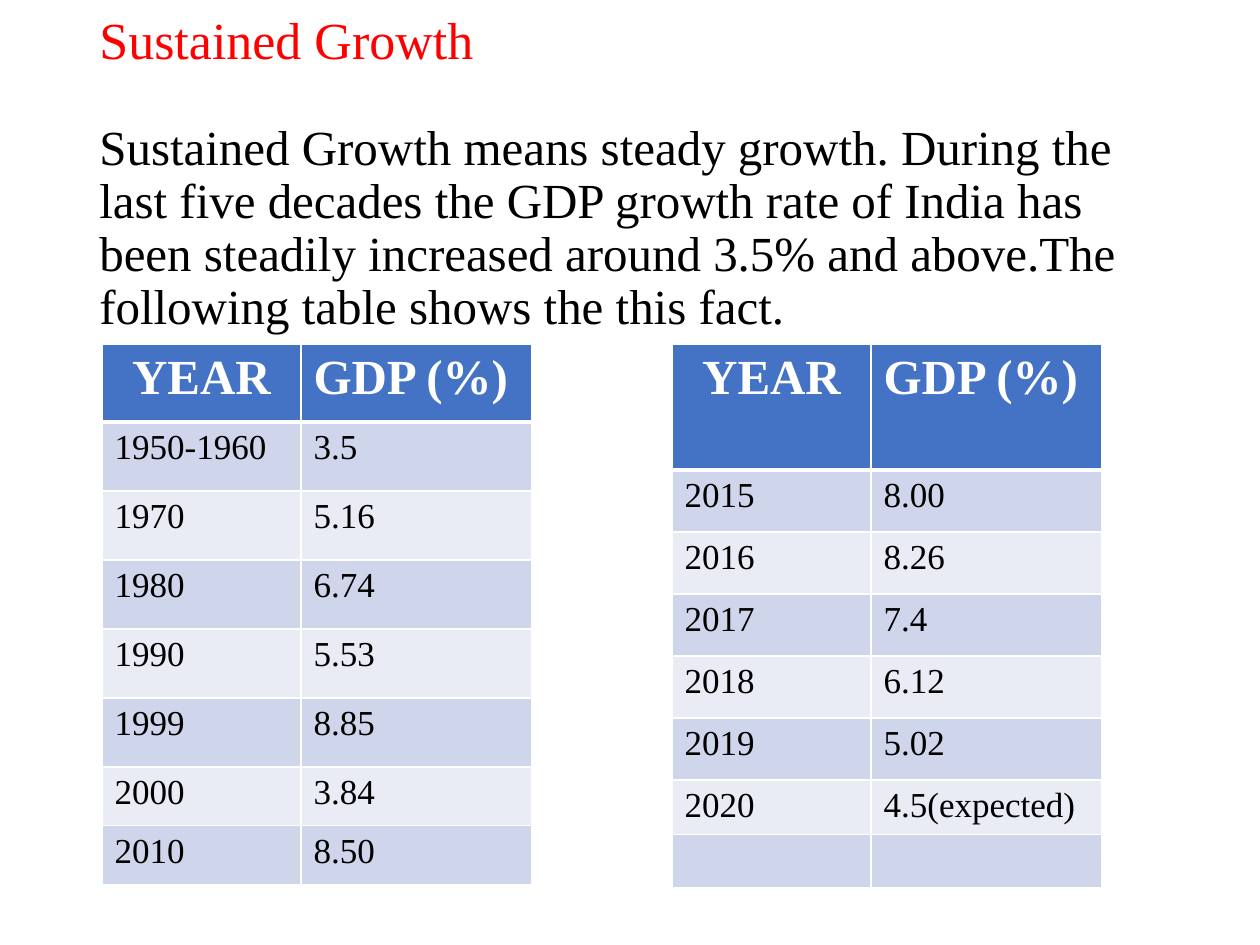
import pptx
import pptx.dml.color
import pptx.enum.text
import pptx.oxml
import pptx.oxml.ns
import pptx.util
from dataclasses import dataclass

EMU_PER_PX = 914400 / 126


def px(length):
    return pptx.util.Emu(round(length * EMU_PER_PX))


@dataclass(frozen=True)
class Theme:
    font: str = "Times New Roman"
    title_color: str = "FF0000"
    text_color: str = "000000"
    header_text: str = "FFFFFF"
    header_fill: str = "4472C4"
    band_fills: tuple = ("CFD5EA", "E9EBF5")
    border_color: str = "FFFFFF"
    title_size: float = 29.7
    body_size: int = 28
    cell_size: int = 20
    thin_border: int = 1
    thick_border: int = 3


class SlideBuilder:
    def __init__(self, slide, theme):
        self.slide = slide
        self.theme = theme

    def style_paragraph(self, paragraph, size, color, bold=False):
        for run in paragraph.runs:
            run.font.name = self.theme.font
            run.font.size = pptx.util.Pt(size)
            run.font.bold = bold
            run.font.color.rgb = pptx.dml.color.RGBColor.from_string(color)

    def text(self, text, left, top, width, height, size, color):
        shape = self.slide.shapes.add_textbox(px(left), px(top), px(width), px(height))
        text_frame = shape.text_frame
        text_frame.word_wrap = True
        text_frame.text = text
        paragraph = text_frame.paragraphs[0]
        paragraph.line_spacing = 0.9
        self.style_paragraph(paragraph, size, color)
        return shape

    def border(self, cell, sides):
        properties = cell._tc.get_or_add_tcPr()
        for index, (side, weight) in enumerate(sides.items()):
            line = pptx.oxml.parse_xml(
                f'<a:ln{side} {pptx.oxml.ns.nsdecls("a")} w="{pptx.util.Pt(weight)}">'
                f'<a:solidFill><a:srgbClr val="{self.theme.border_color}"/></a:solidFill>'
                f"</a:ln{side}>"
            )
            properties.insert(index, line)

    def cell(self, cell, text, row):
        theme = self.theme
        header = row == 0
        fill = theme.header_fill if header else theme.band_fills[(row - 1) % 2]
        cell.fill.solid()
        cell.fill.fore_color.rgb = pptx.dml.color.RGBColor.from_string(fill)
        cell.text_frame.text = text
        self.style_paragraph(
            cell.text_frame.paragraphs[0],
            theme.body_size if header else theme.cell_size,
            theme.header_text if header else theme.text_color,
            header,
        )
        sides = dict.fromkeys("LRTB", theme.thin_border)
        if row < 2:
            sides["B" if header else "T"] = theme.thick_border
        self.border(cell, sides)

    def table(self, rows, left, top, column_widths, row_heights):
        frame = self.slide.shapes.add_table(
            len(rows), len(column_widths), px(left), px(top),
            px(sum(column_widths)), px(sum(row_heights)),
        )
        table = frame.table
        for column, width in zip(table.columns, column_widths):
            column.width = px(width)
        for row_index, (values, height) in enumerate(zip(rows, row_heights)):
            table.rows[row_index].height = px(height)
            for column_index, value in enumerate(values):
                self.cell(table.cell(row_index, column_index), value, row_index)
        table.cell(0, 0).text_frame.paragraphs[0].alignment = pptx.enum.text.PP_ALIGN.CENTER


def main():
    theme = Theme()
    presentation = pptx.Presentation()
    presentation.slide_width = px(1260)
    presentation.slide_height = px(945)
    slide = presentation.slides.add_slide(presentation.slide_layouts[6])
    builder = SlideBuilder(slide, theme)

    title = builder.text("Sustained Growth", 87, 23, 669, 94, theme.title_size, theme.title_color)
    title.text_frame.vertical_anchor = pptx.enum.text.MSO_ANCHOR.MIDDLE
    title.text_frame.margin_top = 0
    title.text_frame.margin_bottom = px(54)

    body = builder.text(
        "Sustained Growth means steady growth. During the last five decades the GDP growth "
        "rate of India has been steadily increased around 3.5% and above.The following table "
        "shows the this fact.",
        87, 117, 1086, 805, theme.body_size, theme.text_color,
    )
    body.text_frame.paragraphs[0].space_before = pptx.util.Pt(7.5)

    header = ("YEAR", "GDP (%)")
    decades = [
        header, ("1950-1960", "3.5"), ("1970", "5.16"), ("1980", "6.74"),
        ("1990", "5.53"), ("1999", "8.85"), ("2000", "3.84"), ("2010", "8.50"),
    ]
    recent_years = [
        header, ("2015", "8.00"), ("2016", "8.26"), ("2017", "7.4"),
        ("2018", "6.12"), ("2019", "5.02"), ("2020", "4.5(expected)"), ("", ""),
    ]
    column_widths = (199, 231)
    builder.table(decades, 102, 344, column_widths, [78] + [69] * 5 + [59] * 2)
    builder.table(recent_years, 672, 344, column_widths, [126] + [62] * 5 + [53] * 2)

    presentation.save("out.pptx")


if __name__ == "__main__":
    main()
